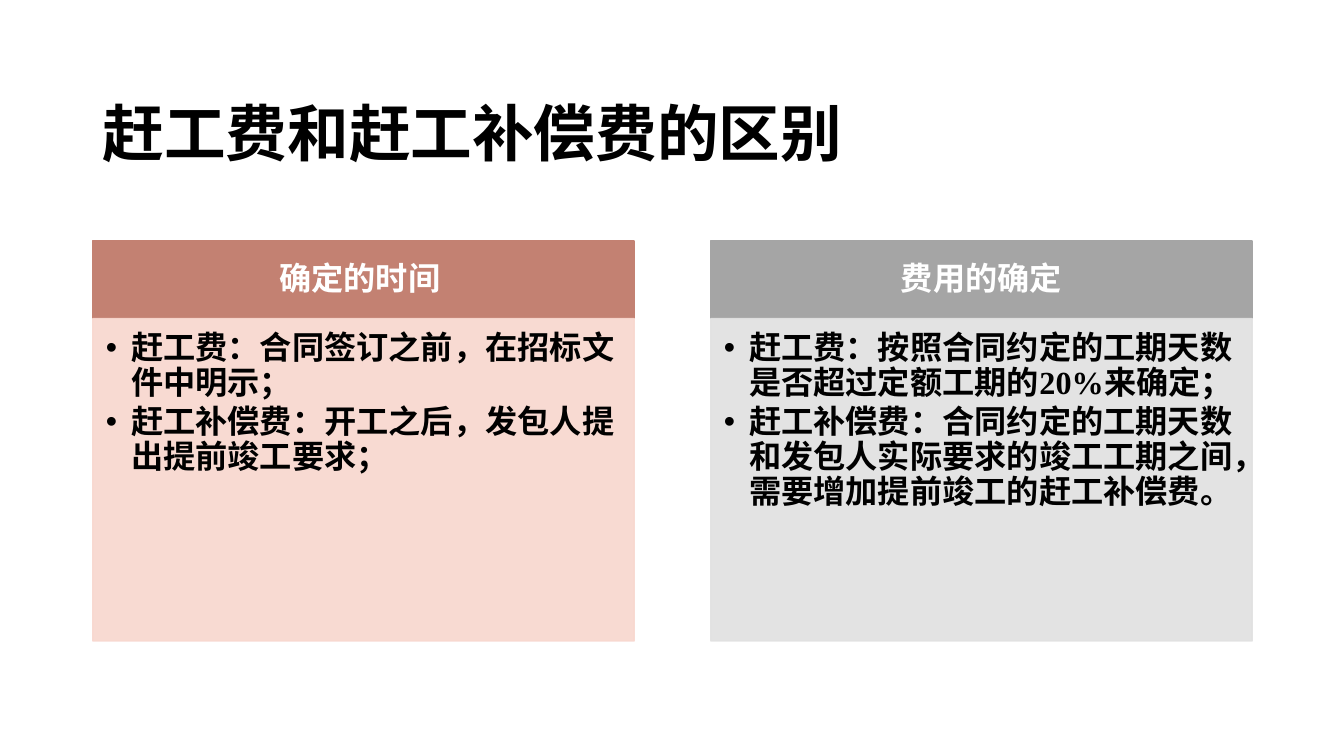
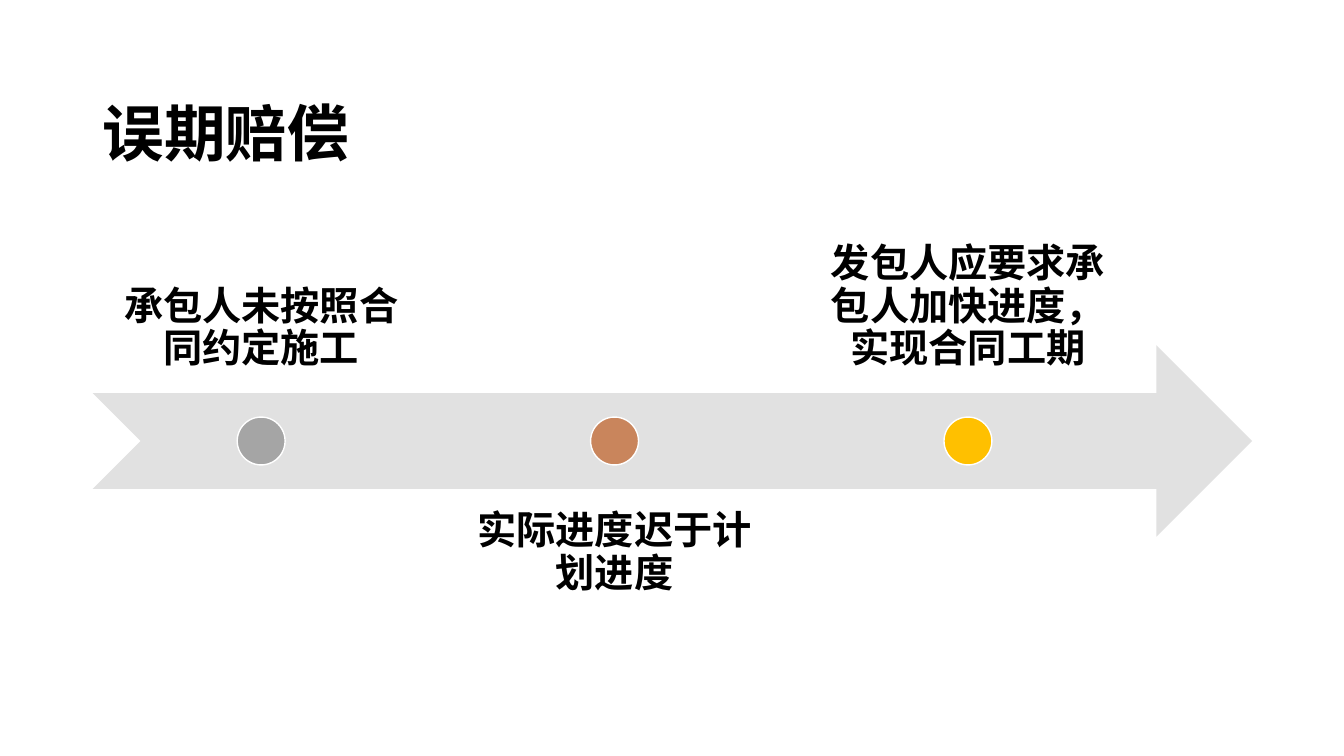
from pptx import Presentation
from pptx.dml.color import RGBColor
from pptx.enum.lang import MSO_LANGUAGE_ID
from pptx.enum.shapes import MSO_SHAPE
from pptx.enum.text import MSO_ANCHOR, PP_ALIGN
from pptx.oxml.ns import qn
from pptx.util import Pt
from lxml.etree import SubElement

PX = 9144  # 100 px to the inch
FONT = "Times New Roman"
HUES = {
    "ink": "000000", "paper": "FFFFFF",
    "clay": "C38172", "blush": "F8D7CE",
    "gray": "A5A5A5", "mist": "E1E1E1",
    "rust": "C9855C", "gold": "FFC000",
}
MAIN = (92, 239, 1150, 397)
FLOW = (92, 200, 1150, 475)

# Text styles
TITLE = {"size": 44, "hue": "ink", "pads": (10, 5, 10, 5), "anchor": MSO_ANCHOR.MIDDLE,
         "para": {"alignment": PP_ALIGN.JUSTIFY, "line_spacing": 1.5}}
HEAD = {"size": 23, "hue": "paper", "pads": (18, 10, 18, 10), "anchor": MSO_ANCHOR.MIDDLE,
        "para": {"alignment": PP_ALIGN.CENTER, "line_spacing": 0.9}}
LIST = {"size": 23, "hue": "ink", "pads": (13, 13, 18, 20), "anchor": MSO_ANCHOR.TOP, "dent": 25,
        "para": {"alignment": PP_ALIGN.LEFT, "line_spacing": 0.9, "space_after": Pt(3.5)}}
ABOVE = {"size": 28, "hue": "ink", "pads": (22, 22, 22, 22), "anchor": MSO_ANCHOR.BOTTOM,
         "para": {"alignment": PP_ALIGN.CENTER, "line_spacing": 0.9}}
BELOW = {**ABOVE, "anchor": MSO_ANCHOR.TOP}


def rgb(hue):
    return RGBColor.from_string(HUES[hue])


def assign(obj, values):
    for name, value in values.items():
        setattr(obj, name, value)


def scale(box):
    return [round(n * PX) for n in box]


def bullet(para, dent):
    props = para._p.get_or_add_pPr()
    props.set("marL", str(dent * PX))
    props.set("indent", str(-dent * PX))
    SubElement(props, qn("a:buFont")).set("typeface", "Arial")
    SubElement(props, qn("a:buChar")).set("char", "•")


def write(shape, lines, style):
    frame = shape.text_frame
    sides = ("margin_left", "margin_top", "margin_right", "margin_bottom")
    assign(frame, dict(zip(sides, scale(style["pads"]))))
    assign(frame, {"word_wrap": True, "vertical_anchor": style["anchor"]})
    for i, line in enumerate(lines):
        para = frame.add_paragraph() if i else frame.paragraphs[0]
        assign(para, style["para"])
        if "dent" in style:
            bullet(para, style["dent"])
        run = para.add_run()
        run.text = line
        assign(run.font, {"name": FONT, "size": Pt(style["size"]), "bold": True,
                          "language_id": MSO_LANGUAGE_ID.SIMPLIFIED_CHINESE})
        run.font.color.rgb = rgb(style["hue"])


def label(slide, box, lines, style):
    write(slide.shapes.add_textbox(*scale(box)), lines, style)


def draw(slide, kind, box, fill, line=None, alpha=100):
    shape = slide.shapes.add_shape(kind, *scale(box))
    shape.shadow.inherit = False
    shape.fill.solid()
    shape.fill.fore_color.rgb = rgb(fill)
    if line:
        shape.line.color.rgb = rgb(line)
        shape.line.width = Pt(1)
    else:
        shape.line.fill.background()
    if alpha < 100:
        for node in shape._element.spPr.iter(qn("a:srgbClr")):
            SubElement(node, qn("a:alpha")).set("val", str(alpha * 1000))
    return shape


def start(deck, title):
    slide = deck.slides.add_slide(deck.slide_layouts[6])
    label(slide, (92, 40, 1150, 145), [title], TITLE)
    return slide


# One column: heading band over a bulleted panel
def column(slide, box, head, lines, dark, pale):
    x, y, w, h = box
    band = 77
    top = draw(slide, MSO_SHAPE.RECTANGLE, (x, y, w, band), dark, dark)
    write(top, [head], HEAD)
    body = draw(slide, MSO_SHAPE.RECTANGLE, (x, y + band, w, h - band), pale, pale, 90)
    write(body, lines, LIST)


def compare(slide, box, cols):
    x, y, w, h = box
    gap = 76
    wide = (w - gap * (len(cols) - 1)) // len(cols)
    for i, col in enumerate(cols):
        column(slide, (x + i * (wide + gap), y, wide, h), *col)


# Arrow with dots, and labels above and below by turns
def timeline(slide, box, steps):
    x, y, w, h = box
    tall = h * 2 // 5
    draw(slide, MSO_SHAPE.NOTCHED_RIGHT_ARROW, (x, y + (h - tall) / 2, w, tall), "mist")
    wide, pitch, dot = 334, 350.5, tall / 4
    for i, (text, hue) in enumerate(steps):
        left = x + i * pitch
        low = i % 2
        label(slide, (left, y + low * (h - tall), wide, tall), [text], BELOW if low else ABOVE)
        draw(slide, MSO_SHAPE.OVAL,
             (left + (wide - dot) / 2, y + (h - dot) / 2, dot, dot), hue, "paper")


def main():
    deck = Presentation()
    assign(deck, {"slide_width": 1333 * PX, "slide_height": 750 * PX})
    compare(start(deck, "赶工费和赶工补偿费的区别"), MAIN, [
        ("确定的时间 ",
         ["赶工费：合同签订之前，在招标文件中明示；",
          "赶工补偿费：开工之后，发包人提出提前竣工要求；"],
         "clay", "blush"),
        ("费用的确定",
         ["赶工费：按照合同约定的工期天数是否超过定额工期的20%来确定；",
          "赶工补偿费：合同约定的工期天数和发包人实际要求的竣工工期之间，需要增加提前竣工的赶工补偿费。"],
         "gray", "mist"),
    ])
    timeline(start(deck, "误期赔偿"), FLOW, [
        ("承包人未按照合同约定施工", "gray"),
        ("实际进度迟于计划进度", "rust"),
        ("发包人应要求承包人加快进度，实现合同工期", "gold"),
    ])
    deck.save("out.pptx")


if __name__ == "__main__":
    main()
